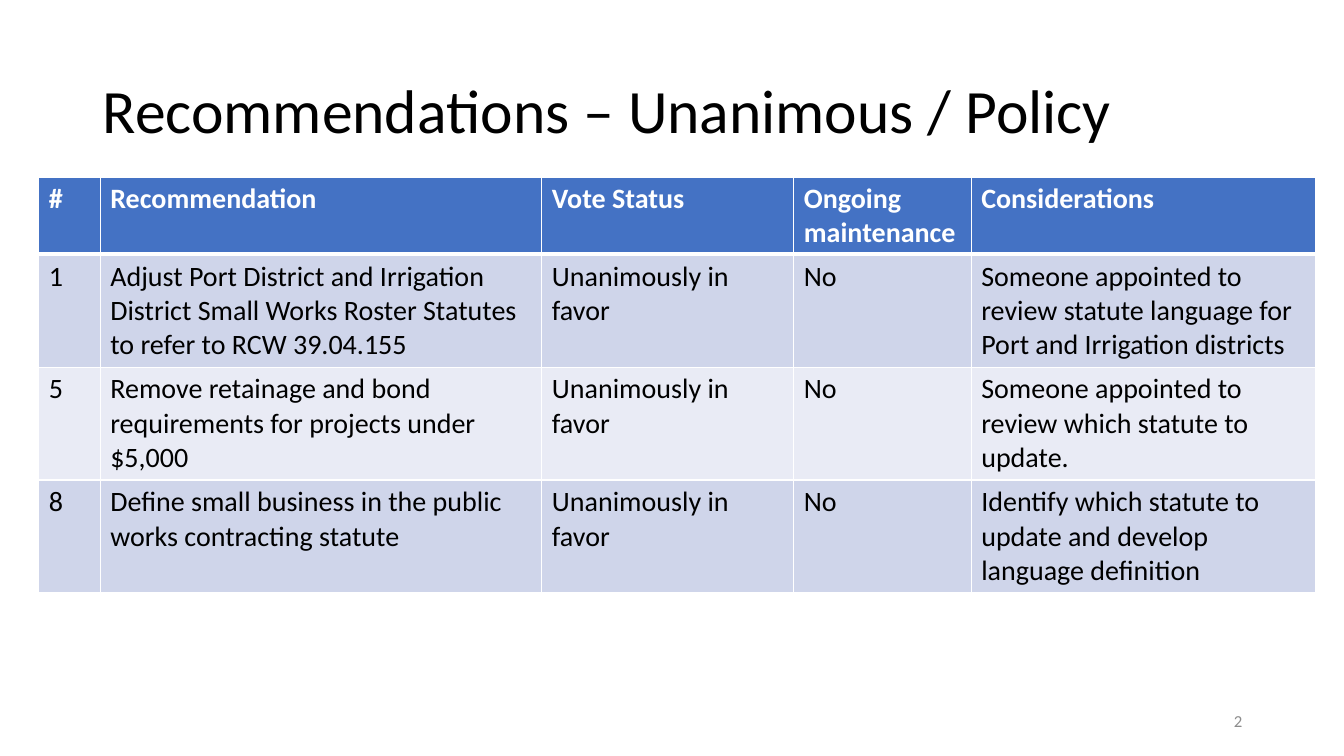
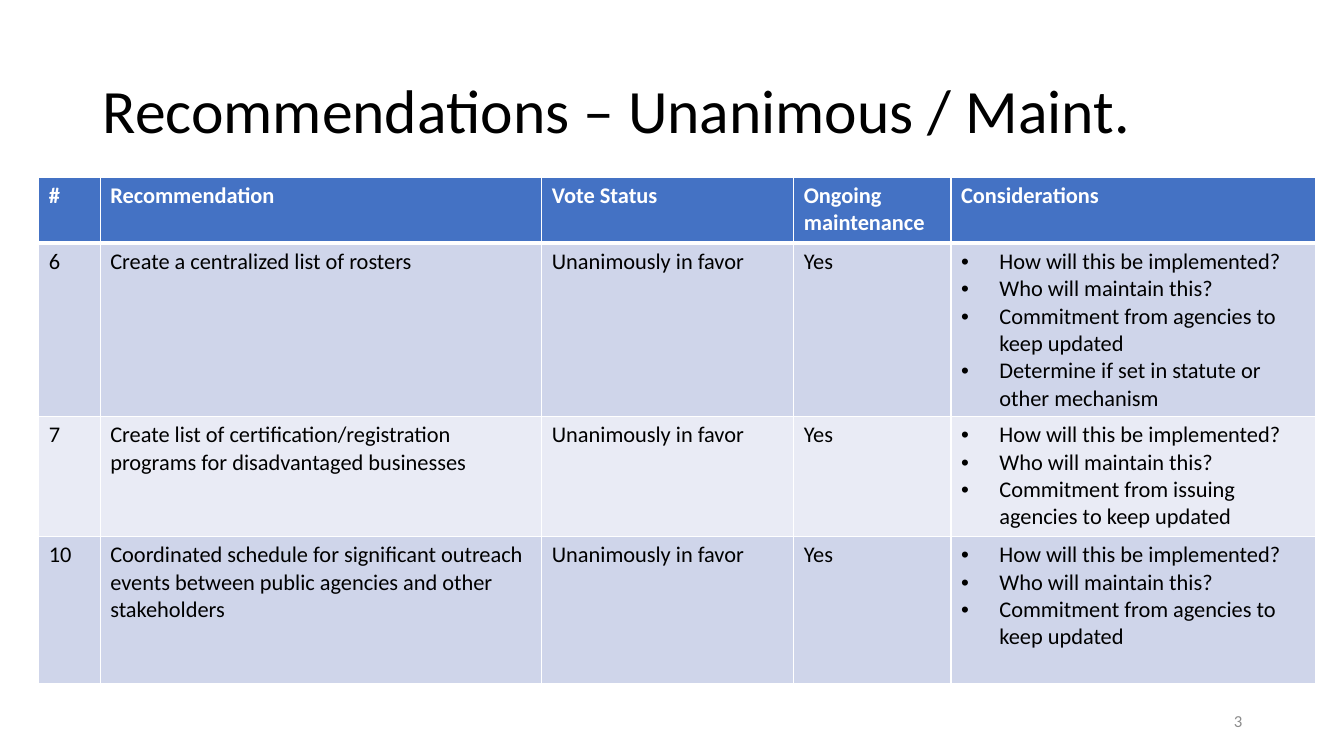
from dataclasses import dataclass

from lxml import etree
from pptx import Presentation
from pptx.dml.color import RGBColor
from pptx.enum.text import MSO_ANCHOR, PP_ALIGN
from pptx.oxml.ns import qn
from pptx.util import Inches, Pt

LEFT, RIGHT = PP_ALIGN.LEFT, PP_ALIGN.RIGHT
MIDDLE = MSO_ANCHOR.MIDDLE

FONT = "Calibri"
COLORS = {
    "text": "000000",
    "header": "4472C4",
    "header_text": "FFFFFF",
    "odd_row": "CFD5EA",
    "even_row": "E9EBF5",
    "border": "FFFFFF",
    "number": "8C8C8C",
}
SLIDE_WIDTH, SLIDE_HEIGHT = Inches(13.33), Inches(7.5)
BLANK_LAYOUT = 6
BULLET_INDENT = Inches(0.38)
THIN, THICK = 1, 3

HEADINGS = ("#", "Recommendation", "Vote Status", "Ongoing maintenance", "Considerations")
VOTE = "Unanimously in favor"
OPEN_QUESTIONS = ("How will this be implemented?", "Who will maintain this?")


@dataclass(frozen=True)
class Area:
    """Place and size in percent of the slide's width and height."""
    left: float
    top: float
    width: float
    height: float

    def box(self) -> tuple[int, int, int, int]:
        return across(self.left), down(self.top), across(self.width), down(self.height)


@dataclass(frozen=True)
class Recommendation:
    number: int
    summary: str
    considerations: str | tuple[str, ...]  # a tuple becomes a bulleted list


@dataclass(frozen=True)
class RecommendationSlide:
    title: str
    page: int
    maintenance: str
    text_size: int
    maintenance_width: float  # percent of slide width
    row_heights: tuple[float, ...]  # percent of slide height
    recommendations: tuple[Recommendation, ...]


def across(percent: float) -> int:
    return round(SLIDE_WIDTH * percent / 100)


def down(percent: float) -> int:
    return round(SLIDE_HEIGHT * percent / 100)


TITLE_AREA = Area(6.9, 5.33, 86.27, 19.33)
TABLE_AREA = Area(2.88, 23.4, 95.05, 55)
NUMBER_AREA = Area(70.67, 92.67, 22.5, 5.33)
FIRST_COLUMNS = (4.58, 32.86, 18.75)  # number, recommendation, vote status

SLIDES = (
    RecommendationSlide(
        "Recommendations – Unanimous / Policy", 2, "No", 20, 13.2,
        (10.2, 14.93, 14.93, 14.93),
        (
            Recommendation(
                1, "Adjust Port District and Irrigation District Small Works Roster "
                "Statutes to refer to RCW 39.04.155",
                "Someone appointed to review statute language for Port and Irrigation districts"),
            Recommendation(
                5, "Remove retainage and bond requirements for projects under $5,000",
                "Someone appointed to review which statute to update."),
            Recommendation(
                8, "Define small business in the public works contracting statute",
                "Identify which statute to update and develop language definition"),
        ),
    ),
    RecommendationSlide(
        "Recommendations – Unanimous / Maint.", 3, "Yes", 16, 11.7,
        (8.74, 22.93, 15.87, 19.47),
        (
            Recommendation(
                6, "Create a centralized list of rosters",
                (*OPEN_QUESTIONS, "Commitment from agencies to keep updated",
                 "Determine if set in statute or other mechanism")),
            Recommendation(
                7, "Create list of certification/registration programs for disadvantaged businesses",
                (*OPEN_QUESTIONS, "Commitment from issuing agencies to keep updated")),
            Recommendation(
                10, "Coordinated schedule for significant outreach events between public "
                "agencies and other stakeholders",
                (*OPEN_QUESTIONS, "Commitment from agencies to keep updated")),
        ),
    ),
)


def write_text(frame, text: str | tuple[str, ...], *, size: int, color: str = "text",
               bold: bool = False, align=LEFT, line_spacing: float = 1.0) -> None:
    """Fill a text frame; a tuple gives one bulleted paragraph per entry."""
    bulleted = isinstance(text, tuple)
    frame.word_wrap = True
    for index, line in enumerate(text if bulleted else (text,)):
        paragraph = frame.add_paragraph() if index else frame.paragraphs[0]
        paragraph.alignment = align
        paragraph.line_spacing = line_spacing
        run = paragraph.add_run()
        run.text = line
        run.font.name, run.font.size, run.font.bold = FONT, Pt(size), bold
        run.font.color.rgb = RGBColor.from_string(COLORS[color])
        if bulleted:
            properties = paragraph._p.get_or_add_pPr()
            properties.set("marL", str(BULLET_INDENT))
            properties.set("indent", str(-BULLET_INDENT))
            etree.SubElement(properties, qn("a:buFont"), typeface="Arial")
            etree.SubElement(properties, qn("a:buChar"), char="•")


def add_text(slide, area: Area, text: str, **text_format) -> None:
    frame = slide.shapes.add_textbox(*area.box()).text_frame
    frame.vertical_anchor = MIDDLE
    write_text(frame, text, **text_format)


def set_borders(cell, top: int, bottom: int) -> None:
    """Draw the four cell edges; they must come before the fill in the XML."""
    properties = cell._tc.get_or_add_tcPr()
    edges = {"a:lnL": THIN, "a:lnR": THIN, "a:lnT": top, "a:lnB": bottom}
    for position, (edge, width) in enumerate(edges.items()):
        line = etree.Element(qn(edge), w=str(Pt(width)))
        fill = etree.SubElement(line, qn("a:solidFill"))
        etree.SubElement(fill, qn("a:srgbClr"), val=COLORS["border"])
        properties.insert(position, line)


def add_recommendation_table(slide, content: RecommendationSlide) -> None:
    rows = [HEADINGS] + [
        (str(item.number), item.summary, VOTE, content.maintenance, item.considerations)
        for item in content.recommendations
    ]
    table = slide.shapes.add_table(len(rows), len(HEADINGS), *TABLE_AREA.box()).table

    # The last column takes the width that is left
    widths = (*FIRST_COLUMNS, content.maintenance_width)
    for column, width in zip(table.columns, (*widths, TABLE_AREA.width - sum(widths))):
        column.width = across(width)
    for row, height in zip(table.rows, content.row_heights):
        row.height = down(height)

    for row_index, texts in enumerate(rows):
        is_header = row_index == 0
        row_color = "header" if is_header else "odd_row" if row_index % 2 else "even_row"
        for column_index, text in enumerate(texts):
            cell = table.cell(row_index, column_index)
            cell.fill.solid()
            cell.fill.fore_color.rgb = RGBColor.from_string(COLORS[row_color])
            set_borders(cell, top=THICK if row_index == 1 else THIN,
                        bottom=THICK if is_header else THIN)
            write_text(cell.text_frame, text, size=content.text_size, bold=is_header,
                       color="header_text" if is_header else "text")


def add_recommendation_slide(deck, content: RecommendationSlide) -> None:
    slide = deck.slides.add_slide(deck.slide_layouts[BLANK_LAYOUT])
    add_text(slide, TITLE_AREA, content.title, size=44, line_spacing=0.9)
    add_recommendation_table(slide, content)
    add_text(slide, NUMBER_AREA, str(content.page), size=12, color="number", align=RIGHT)


def main() -> None:
    deck = Presentation()
    deck.slide_width, deck.slide_height = SLIDE_WIDTH, SLIDE_HEIGHT
    for content in SLIDES:
        add_recommendation_slide(deck, content)
    deck.save("out.pptx")


if __name__ == "__main__":
    main()
